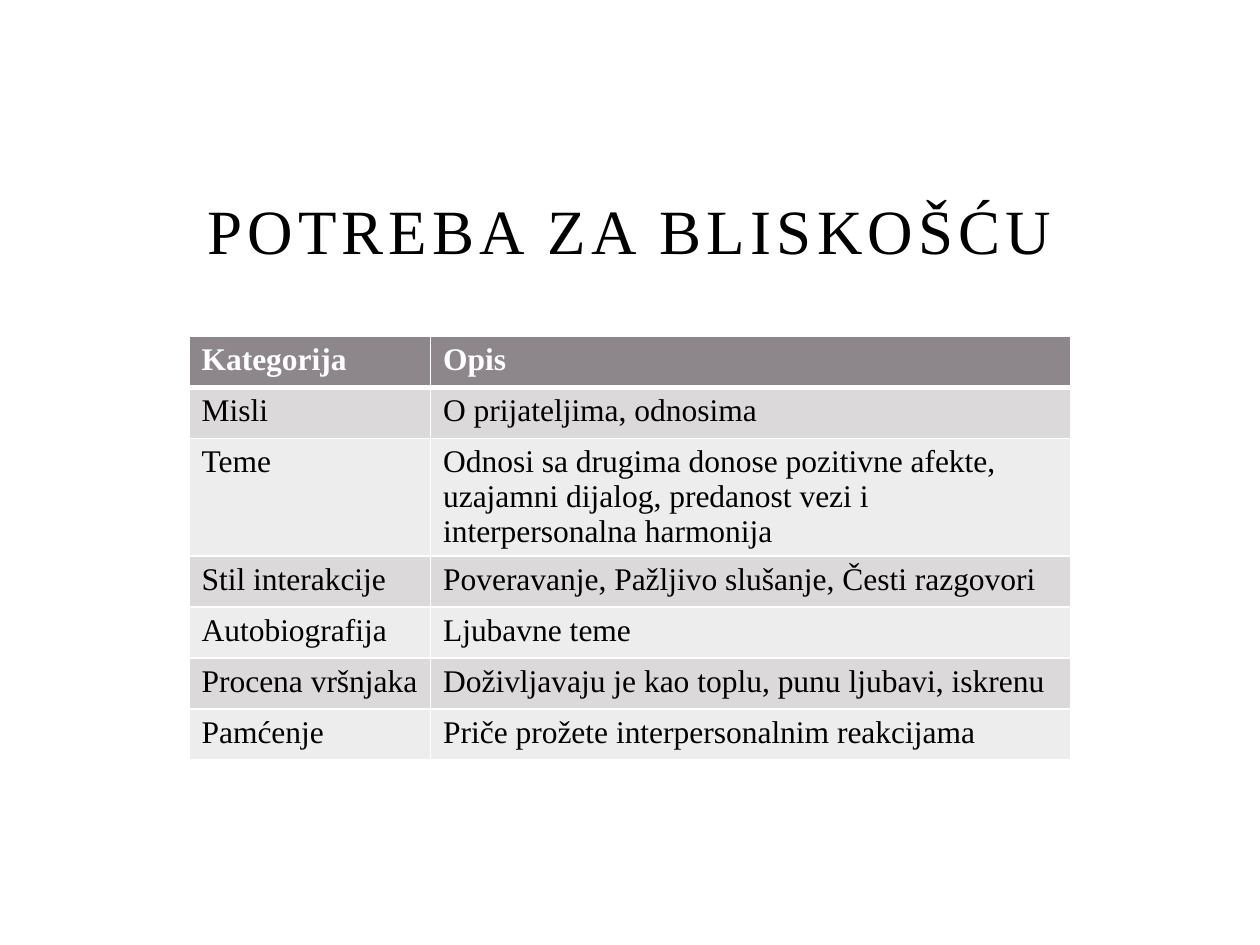
from dataclasses import dataclass

from lxml import etree
from pptx import Presentation
from pptx.dml.color import RGBColor
from pptx.enum.text import MSO_ANCHOR, MSO_AUTO_SIZE, PP_ALIGN
from pptx.oxml.ns import qn
from pptx.util import Pt

TITLE_ONLY = 5
CENTER = PP_ALIGN.CENTER
BOTTOM = MSO_ANCHOR.BOTTOM
NO_AUTOFIT = MSO_AUTO_SIZE.NONE


@dataclass(frozen=True)
class Theme:
    font: str = "Times New Roman"
    ink: str = "000000"
    header_ink: str = "FFFFFF"
    header_fill: str = "8D878B"
    bands: tuple = ("DBD9DA", "EEEDEE")
    border: str = "FFFFFF"
    title_size: int = 36
    cell_size: int = 18
    title_spacing: int = 3
    thin: int = 1
    thick: int = 3


THEME = Theme()

TITLE = "POTREBA ZA BLISKOŠĆU"
CATEGORIES = [
    ("Kategorija", "Opis"),
    ("Misli", "O prijateljima, odnosima"),
    ("Teme", "Odnosi sa drugima donose pozitivne afekte, uzajamni dijalog, "
             "predanost vezi i interpersonalna harmonija"),
    ("Stil interakcije", "Poveravanje, Pažljivo slušanje, Česti razgovori"),
    ("Autobiografija", "Ljubavne teme"),
    ("Procena vršnjaka", "Doživljavaju je kao toplu, punu ljubavi, iskrenu"),
    ("Pamćenje", "Priče prožete interpersonalnim reakcijama"),
]

LEFT, WIDTH = 108, 504
TITLE_TOP, TITLE_HEIGHT = 102, 54
TABLE_TOP, ROW_HEIGHT = 192.2, 29.2
COLUMN_WIDTHS = (138, 366)


def set_all(target, values):
    for name, value in values.items():
        setattr(target, name, value)


def format_font(font, size, color, bold=False):
    set_all(font, {"name": THEME.font, "size": Pt(size), "bold": bold})
    font.color.rgb = RGBColor.from_string(color)


def add_title(slide, text):
    title = slide.shapes.title
    set_all(title, {"left": Pt(LEFT), "top": Pt(TITLE_TOP),
                    "width": Pt(WIDTH), "height": Pt(TITLE_HEIGHT)})
    set_all(title.text_frame, {"text": text, "word_wrap": True,
                               "auto_size": NO_AUTOFIT,
                               "vertical_anchor": BOTTOM})
    paragraph = title.text_frame.paragraphs[0]
    paragraph.alignment = CENTER
    font = paragraph.runs[0].font
    format_font(font, THEME.title_size, THEME.ink)
    # Letter spacing is stored in hundredths of a point
    paragraph.runs[0]._r.get_or_add_rPr().set("spc", str(THEME.title_spacing * 100))


def add_borders(cell, widths):
    properties = cell._tc.get_or_add_tcPr()
    # Border lines come before the fill
    for index, (side, width) in enumerate(widths.items()):
        line = etree.Element(qn(f"a:{side}"), w=str(Pt(width)))
        fill = etree.SubElement(line, qn("a:solidFill"))
        etree.SubElement(fill, qn("a:srgbClr"), val=THEME.border)
        properties.insert(index, line)


def fill_cell(cell, text, row):
    is_header = row == 0
    cell.text = text
    ink = THEME.header_ink if is_header else THEME.ink
    fill = THEME.header_fill if is_header else THEME.bands[(row - 1) % 2]
    format_font(cell.text_frame.paragraphs[0].runs[0].font,
                THEME.cell_size, ink, bold=is_header)
    cell.fill.solid()
    cell.fill.fore_color.rgb = RGBColor.from_string(fill)
    # A thick rule separates the header from the body
    add_borders(cell, {"lnL": THEME.thin, "lnR": THEME.thin,
                       "lnT": THEME.thick if row == 1 else THEME.thin,
                       "lnB": THEME.thick if is_header else THEME.thin})


def add_category_table(slide, rows):
    table = slide.shapes.add_table(
        len(rows), len(COLUMN_WIDTHS), Pt(LEFT), Pt(TABLE_TOP),
        Pt(WIDTH), Pt(ROW_HEIGHT * len(rows))).table
    for column, width in zip(table.columns, COLUMN_WIDTHS):
        column.width = Pt(width)
    for row, texts in enumerate(rows):
        table.rows[row].height = Pt(ROW_HEIGHT)
        for column, text in enumerate(texts):
            fill_cell(table.cell(row, column), text, row)


def main():
    presentation = Presentation()
    set_all(presentation, {"slide_width": Pt(720), "slide_height": Pt(540)})
    slide = presentation.slides.add_slide(presentation.slide_layouts[TITLE_ONLY])
    # Heading
    add_title(slide, TITLE)
    # Categories and their descriptions
    add_category_table(slide, CATEGORIES)
    presentation.save("out.pptx")


if __name__ == "__main__":
    main()
